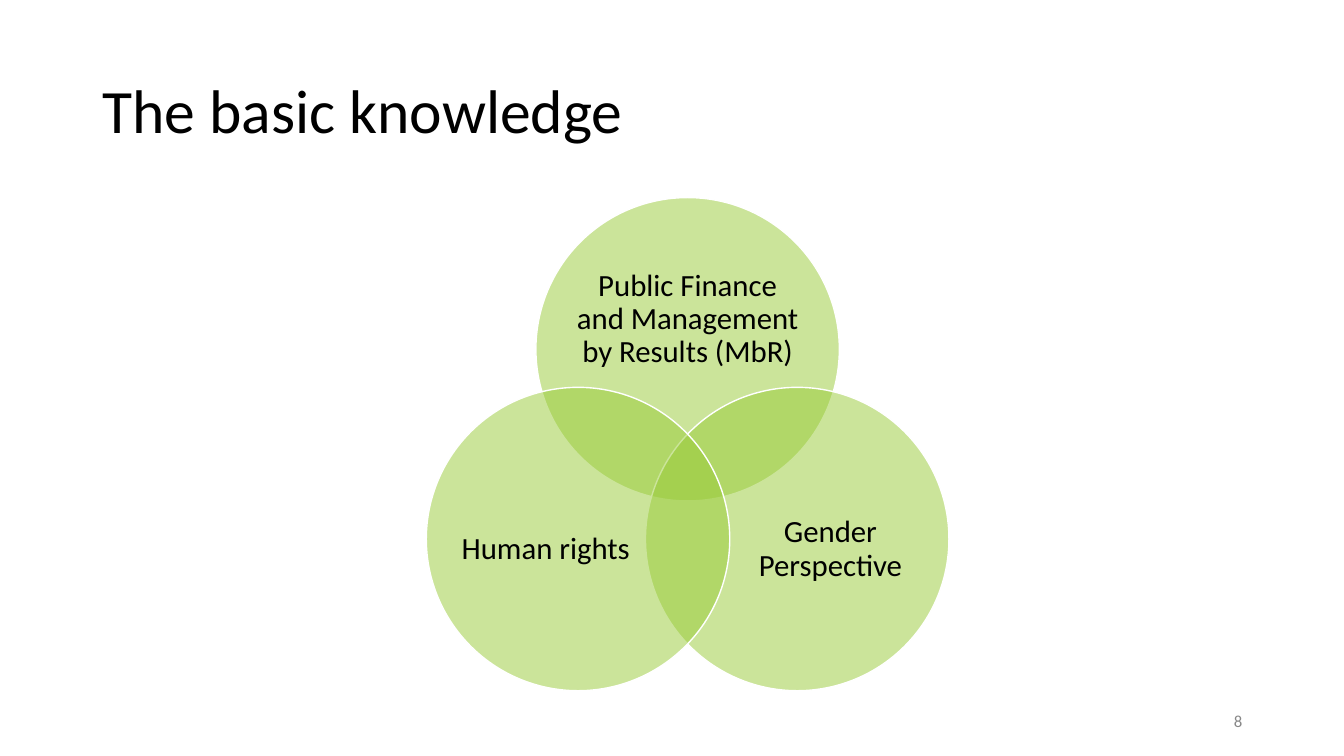
import math
from lxml import etree
from pptx import Presentation
from pptx import util as u
from pptx.dml.color import RGBColor
from pptx.enum import shapes, text
from pptx.oxml.ns import qn

HUES = {"ink": "000000", "disc": "98CB37", "edge": "FFFFFF", "page": "888888"}
SIZE = 3.01  # circle diameter
REACH = 1.255  # from the middle of the diagram to each circle's centre

# Label, angle of the circle, label box relative to the circle
RINGS = [
    ("Public Finance and Management by Results (MbR)", -90, (0.4, 0.53, 2.21, 1.36)),
    ("Gender Perspective", 30, (0.93, 0.78, 1.81, 1.66)),
    ("Human rights", 150, (0.28, 0.78, 1.81, 1.66)),
]


def hue(name):
    return RGBColor.from_string(HUES[name])


def write(slide, box, words, size, ink="ink", align="LEFT", pad=(0.1, 0.05), lead=0.9):
    area = slide.shapes.add_textbox(*map(u.Inches, box))
    frame = area.text_frame
    frame.word_wrap = True
    frame.vertical_anchor = text.MSO_ANCHOR.MIDDLE
    frame.margin_left = frame.margin_right = u.Inches(pad[0])
    frame.margin_top = frame.margin_bottom = u.Inches(pad[1])
    para = frame.paragraphs[0]
    para.alignment = getattr(text.PP_ALIGN, align)
    para.line_spacing = lead
    run = para.add_run()
    run.text = words
    run.font.name = "Calibri"
    run.font.size = u.Pt(size)
    run.font.color.rgb = hue(ink)


def disc(slide, left, top):
    ring = slide.shapes.add_shape(
        shapes.MSO_SHAPE.OVAL, *map(u.Inches, (left, top, SIZE, SIZE)))
    ring.shadow.inherit = False
    ring.fill.solid()
    ring.fill.fore_color.rgb = hue("disc")
    ring.line.color.rgb = hue("edge")
    ring.line.width = u.Pt(1)
    # Half transparent fill
    tint = ring.fill._xPr.find(qn("a:solidFill"))[0]
    etree.SubElement(tint, qn("a:alpha")).set("val", "50000")


def venn(slide, box):
    left, top, wide, high = box
    mid_x = left + wide / 2
    mid_y = top + SIZE / 2 + REACH
    for words, angle, (dx, dy, w, h) in RINGS:
        turn = math.radians(angle)
        x = mid_x + REACH * math.cos(turn) - SIZE / 2
        y = mid_y + REACH * math.sin(turn) - SIZE / 2
        disc(slide, x, y)
        write(slide, (x + dx, y + dy, w, h), words, 22, align="CENTER", pad=(0, 0))


def main():
    deck = Presentation()
    deck.slide_width = u.Inches(13.33)
    deck.slide_height = u.Inches(7.5)
    slide = deck.slides.add_slide(deck.slide_layouts[6])
    # Title
    write(slide, (0.92, 0.4, 11.5, 1.45), "The basic knowledge", 44)
    # Page number
    write(slide, (9.42, 6.95, 3, 0.4), "8", 12, "page", "RIGHT", lead=1.0)
    # Three overlapping circles
    venn(slide, (4.23, 1.96, 5.18, 4.9))
    deck.save("out.pptx")


if __name__ == "__main__":
    main()
